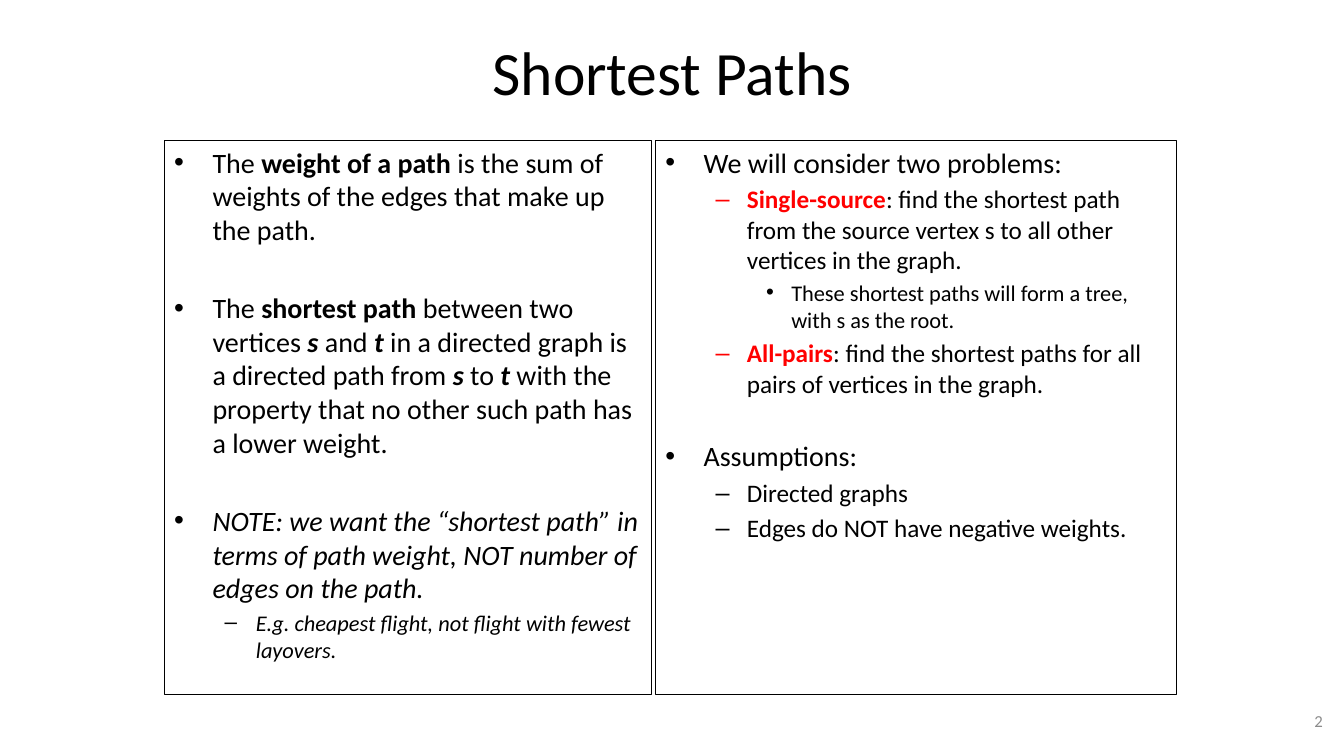
from lxml import etree
from pptx import Presentation
from pptx.dml.color import RGBColor
from pptx.enum.shapes import MSO_SHAPE
from pptx.enum.text import MSO_ANCHOR, PP_ALIGN
from pptx.oxml.ns import qn
from pptx.util import Inches, Pt

RECTANGLE = MSO_SHAPE.RECTANGLE
TOP, MIDDLE = MSO_ANCHOR.TOP, MSO_ANCHOR.MIDDLE
LEFT, CENTER, RIGHT = PP_ALIGN.LEFT, PP_ALIGN.CENTER, PP_ALIGN.RIGHT

FONT = "Calibri"
BLACK, RED, GRAY = "000000", "FF0000", "8C8C8C"
# Text margin and hanging indent in inches, then the bullet, for each level
LEVELS = [(0.38, 0.38, "•"), (0.81, 0.31, "–"), (1.25, 0.25, "•")]
PLAIN, BOLD, ITALIC, BOLD_ITALIC, RED_BOLD = "", "b", "i", "bi", "br"

# Each item: level, size, extra space before, runs of (text, style)
DEFINITIONS = [
    (0, 20, 0, [("The ", PLAIN), ("weight of a path", BOLD),
                (" is the sum of weights of the edges that make up the path.", PLAIN)]),
    (0, 20, 28, [("The ", PLAIN), ("shortest path", BOLD),
                 (" between two vertices ", PLAIN), ("s", BOLD_ITALIC),
                 (" and ", PLAIN), ("t", BOLD_ITALIC),
                 (" in a directed graph is a directed path from ", PLAIN),
                 ("s", BOLD_ITALIC), (" to ", PLAIN), ("t", BOLD_ITALIC),
                 (" with the property that no other such path has a lower weight.", PLAIN)]),
    (0, 20, 28, [("NOTE: we want the “shortest path” in terms of path weight, "
                  "NOT number of edges on the path.", ITALIC)]),
    (1, 16, 0, [("E.g. cheapest flight, not flight with fewest layovers.", ITALIC)]),
]
PROBLEMS = [
    (0, 20, 0, [("We will consider two problems:", PLAIN)]),
    (1, 18, 0, [("Single-source", RED_BOLD),
                (": find the shortest path from the source vertex s "
                 "to all other vertices in the graph.", PLAIN)]),
    (2, 16, 0, [("These shortest paths will form a tree, with s as the root.", PLAIN)]),
    (1, 18, 0, [("All-pairs", RED_BOLD),
                (": find the shortest paths for all pairs of vertices in the graph.", PLAIN)]),
    (0, 20, 25, [("Assumptions:", PLAIN)]),
    (1, 18, 0, [("Directed graphs", PLAIN)]),
    (1, 18, 0, [("Edges do NOT have negative weights.", PLAIN)]),
]


def color(hex_string):
    return RGBColor.from_string(hex_string)


def add_run(paragraph, text, size, hex_color, style=PLAIN):
    run = paragraph.add_run()
    run.text = text
    run.font.name = FONT
    run.font.size = Pt(size)
    run.font.bold = "b" in style
    run.font.italic = "i" in style
    run.font.color.rgb = color(hex_color)


def add_label(slide, left, top, width, height, text, size, hex_color, alignment):
    """Add one line of text, centred vertically in its box."""
    box = slide.shapes.add_textbox(Inches(left), Inches(top), Inches(width), Inches(height))
    box.text_frame.word_wrap = True
    box.text_frame.vertical_anchor = MIDDLE
    paragraph = box.text_frame.paragraphs[0]
    paragraph.alignment = alignment
    add_run(paragraph, text, size, hex_color)


def set_bullet(paragraph, level):
    margin, hanging, bullet = LEVELS[level]
    paragraph.level = level
    properties = paragraph._p.get_or_add_pPr()
    properties.set("marL", str(Inches(margin)))
    properties.set("indent", str(-Inches(hanging)))
    etree.SubElement(properties, qn("a:buFont")).set("typeface", "Arial")
    etree.SubElement(properties, qn("a:buChar")).set("char", bullet)


def add_panel(slide, left, width, items):
    """Add an outlined box with a bulleted list."""
    panel = slide.shapes.add_shape(
        RECTANGLE, Inches(left), Inches(1.39), Inches(width), Inches(5.5))
    panel.shadow.inherit = False
    panel.fill.background()
    panel.line.color.rgb = color(BLACK)
    panel.line.width = Pt(0.75)
    frame = panel.text_frame
    frame.word_wrap = True
    frame.vertical_anchor = TOP
    for index, (level, size, gap, runs) in enumerate(items):
        paragraph = frame.add_paragraph() if index else frame.paragraphs[0]
        paragraph.alignment = LEFT
        paragraph.space_before = Pt(0.2 * size + gap)
        set_bullet(paragraph, level)
        for text, style in runs:
            add_run(paragraph, text, size, RED if "r" in style else BLACK, style)


def main():
    presentation = Presentation()
    presentation.slide_width = Inches(13.33)
    presentation.slide_height = Inches(7.5)
    slide = presentation.slides.add_slide(presentation.slide_layouts[6])
    add_label(slide, 0.67, 0.08, 12, 1.25, "Shortest Paths", 44, BLACK, CENTER)
    add_panel(slide, 1.63, 4.83, DEFINITIONS)
    add_panel(slide, 6.5, 5.17, PROBLEMS)
    add_label(slide, 10.11, 6.95, 3.11, 0.4, "2", 12, GRAY, RIGHT)
    presentation.save("out.pptx")


if __name__ == "__main__":
    main()
